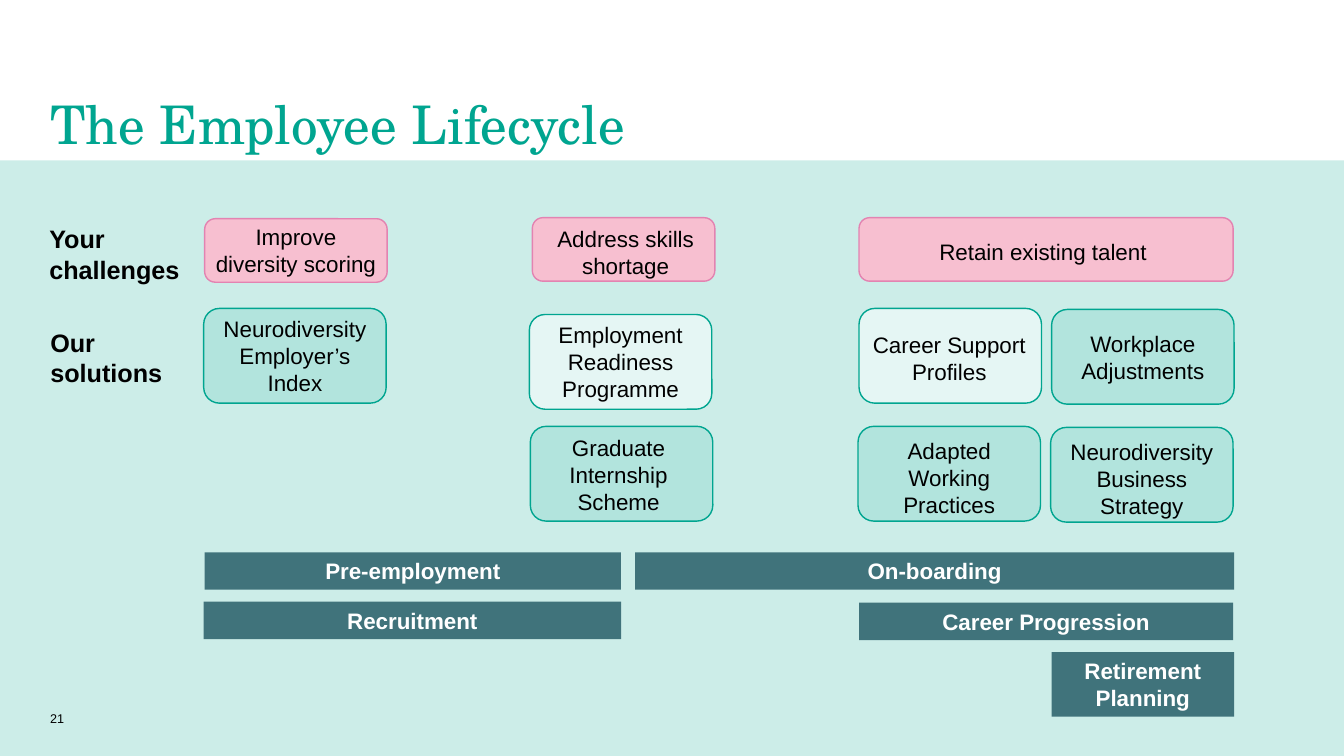
import pptx
import pptx.dml.color
import pptx.enum.shapes
import pptx.enum.text
import pptx.oxml.ns
import pptx.util
from lxml import etree

Inches = pptx.util.Inches
Align = pptx.enum.text.PP_ALIGN
Anchor = pptx.enum.text.MSO_ANCHOR
Kind = pptx.enum.shapes.MSO_SHAPE

# Content: text, (left, top, width, height), then the shift of the text in its box
TITLE = "The Employee Lifecycle"
PAGE_NUMBER = "21"
ROW_LABELS = [
    ("Your challenges", (0.39, 2.17, 1.61, 0.71)),
    ("Our solutions", (0.4, 3.2, 1.61, 0.71)),
]
CARD_WIDTH, WIDE_WIDTH = 1.81, 3.71
CHALLENGE_HEIGHT, SOLUTION_HEIGHT, BAR_HEIGHT = 0.63, 0.94, 0.37
CHALLENGES = [
    ("Improve diversity scoring", (2.03, 2.17, CARD_WIDTH), (0, 0)),
    ("Address skills shortage", (5.28, 2.16, CARD_WIDTH), (0.02, 0.03)),
    ("Retain existing talent", (8.52, 2.16, WIDE_WIDTH), (-0.03, 0.02)),
]
DEEP, PALE = "B2E4DD", "E5F6F4"
SOLUTIONS = [
    ("Neurodiversity Employer’s Index", (2.02, 3.06), (0, 0), DEEP),
    ("Employment Readiness Programme", (5.25, 3.12), (0, 0), PALE),
    ("Graduate Internship Scheme", (5.26, 4.23), (-0.03, 0.01), DEEP),
    ("Career Support Profiles", (8.52, 3.06), (-0.01, 0.02), PALE),
    ("Workplace Adjustments", (10.43, 3.07), (0, 0), DEEP),
    ("Adapted Working Practices", (8.51, 4.23), (0, 0.04), DEEP),
    ("Neurodiversity Business Strategy", (10.42, 4.24), (0, 0.04), DEEP),
]
STAGES = [
    ("Pre-employment", (2.03, 5.48, 4.13, BAR_HEIGHT)),
    ("Recruitment", (2.02, 5.97, 4.14, BAR_HEIGHT)),
    ("On-boarding", (6.3, 5.48, 5.94, BAR_HEIGHT)),
    ("Career Progression", (8.52, 5.98, WIDE_WIDTH, BAR_HEIGHT)),
    ("Retirement Planning", (10.43, 6.47, CARD_WIDTH, 0.64)),
]
GREEN, PINK, PINK_EDGE, SLATE = "00A590", "F7BFD0", "E383B1", "40737B"


def color(value):
    return pptx.dml.color.RGBColor.from_string(value)


def write(box, text, size=16, font="Arial", ink="000000", bold=False,
          align=Align.CENTER, anchor=Anchor.MIDDLE, inset=0.1, shift=(0, 0)):
    frame = box.text_frame
    frame.word_wrap = True
    frame.auto_size = pptx.enum.text.MSO_AUTO_SIZE.NONE
    frame.vertical_anchor = anchor
    across, down = shift
    frame.margin_left, frame.margin_right = Inches(inset + across), Inches(inset - across)
    frame.margin_top, frame.margin_bottom = Inches(0.05 + down), Inches(0.05 - down)
    para = frame.paragraphs[0]
    para.alignment = align
    span = para.add_run()
    span.text = text
    span.font.name, span.font.size, span.font.bold = font, pptx.util.Pt(size), bold
    span.font.color.rgb = color(ink)


def add_block(kind, place, fill, edge=None):
    block = page.shapes.add_shape(kind, *map(Inches, place))
    block.shadow.inherit = False
    block.fill.solid()
    block.fill.fore_color.rgb = color(fill)
    if edge:
        block.line.color.rgb = color(edge)
        block.line.width = pptx.util.Pt(1)
    else:
        block.line.fill.background()
    return block


def add_label(text, place, **style):
    label = page.shapes.add_textbox(*map(Inches, place))
    write(label, text, align=Align.LEFT, anchor=Anchor.TOP, **style)


deck = pptx.Presentation()
deck.slide_width, deck.slide_height = Inches(13.33), Inches(7.5)
page = deck.slides.add_slide(deck.slide_layouts[5])

# Tinted panel behind the diagram
panel = add_block(Kind.RECTANGLE, (0, 1.59, 13.33, 5.91), GREEN)
tint = panel._element.spPr.find(".//" + pptx.oxml.ns.qn("a:srgbClr"))
etree.SubElement(tint, pptx.oxml.ns.qn("a:alpha"), val="20000")

# Title, row labels and page number
title = page.shapes.title
title.left, title.top, title.width, title.height = map(Inches, (0.4, 0.86, 12.41, 0.74))
write(title, TITLE, size=38, font="TeX Gyre Schola", ink=GREEN,
      align=Align.LEFT, anchor=Anchor.TOP)
for text, place in ROW_LABELS:
    add_label(text, place, size=18, bold=True)
add_label(PAGE_NUMBER, (0.4, 7, 0.57, 0.33), size=9)

# Challenge and solution cards
cards = [(text, (*place, CHALLENGE_HEIGHT), shift, PINK, PINK_EDGE)
         for text, place, shift in CHALLENGES]
cards += [(text, (*place, CARD_WIDTH, SOLUTION_HEIGHT), shift, fill, GREEN)
          for text, place, shift, fill in SOLUTIONS]
for text, place, shift, fill, edge in cards:
    card = add_block(Kind.ROUNDED_RECTANGLE, place, fill, edge)
    write(card, text, inset=0.05, shift=shift)

# Lifecycle stage bars
for text, place in STAGES:
    write(add_block(Kind.RECTANGLE, place, SLATE), text, ink="FFFFFF", bold=True)

deck.save("out.pptx")
